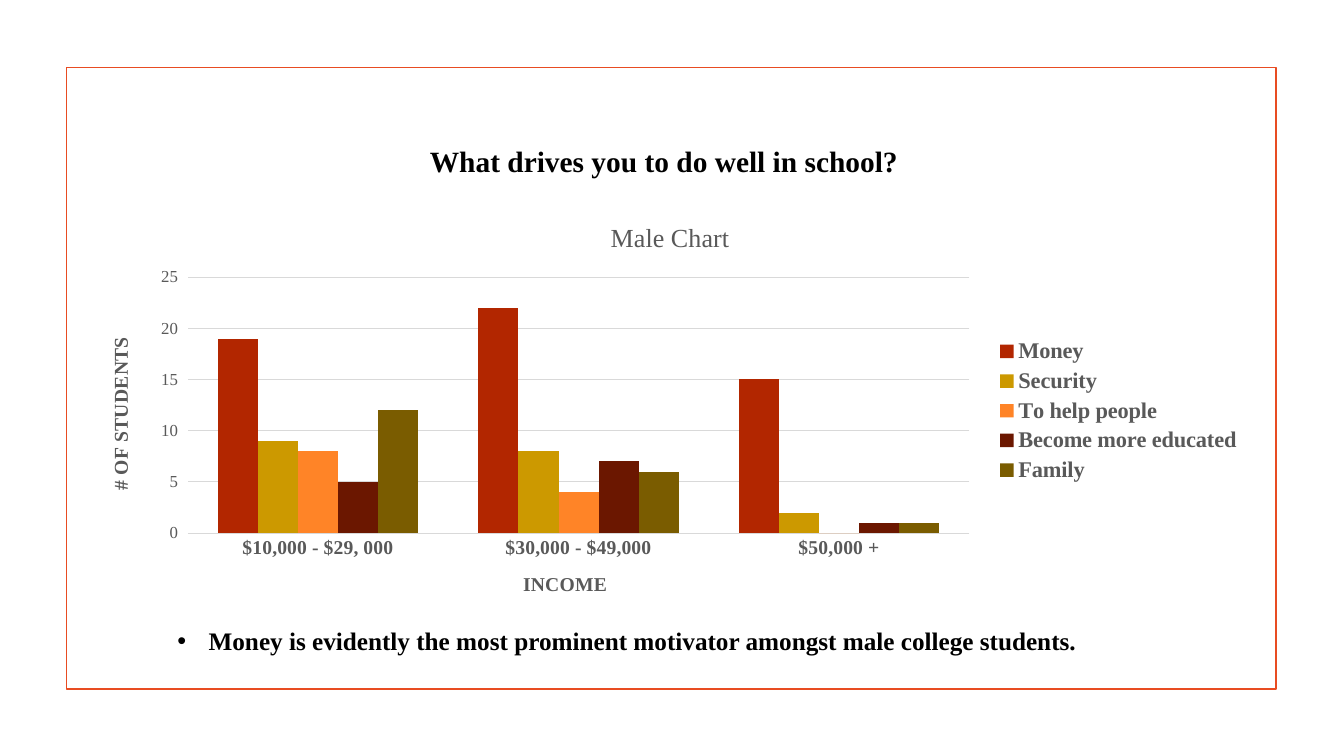
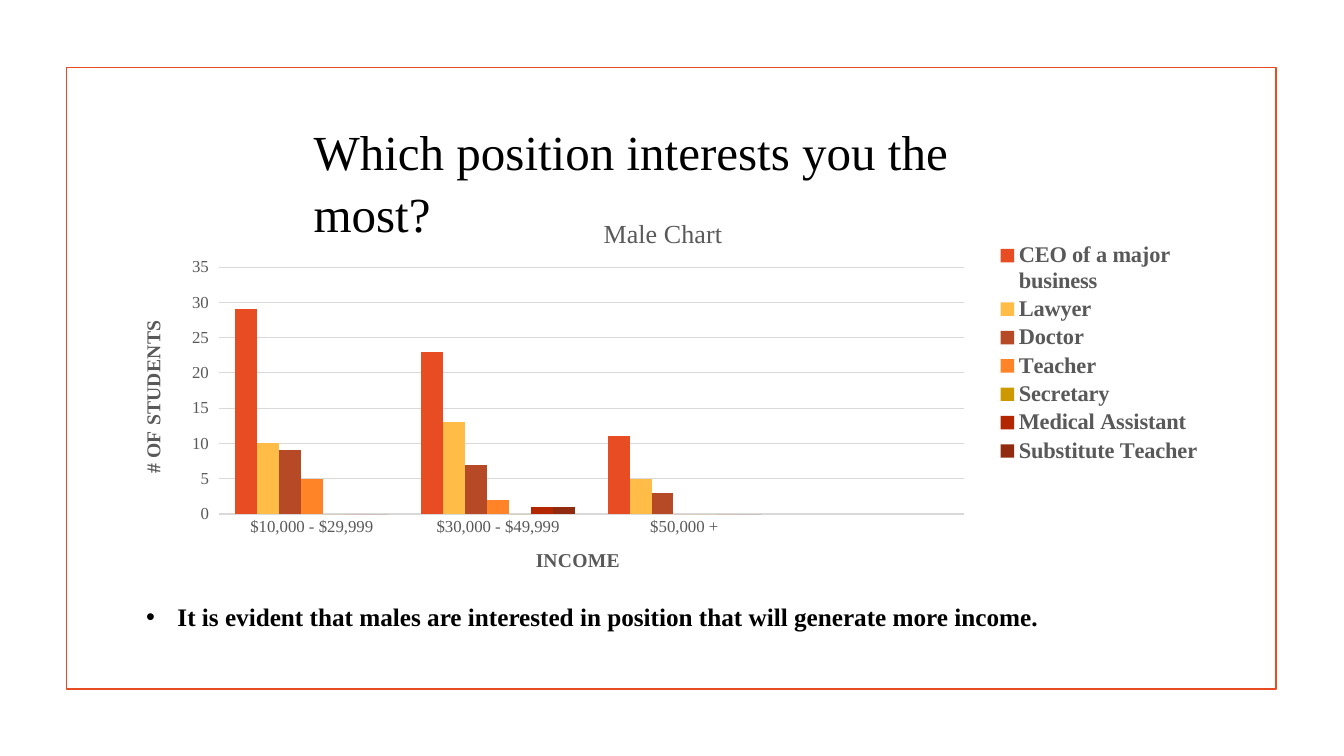
"""Builds two slides that chart what motivates and interests male students."""
from dataclasses import dataclass
from typing import Any, NamedTuple, Optional

from lxml.etree import SubElement
from pptx import Presentation
from pptx.chart.data import CategoryChartData
from pptx.dml.color import RGBColor
from pptx.dml.fill import FillFormat
from pptx.enum.chart import XL_CHART_TYPE, XL_LEGEND_POSITION, XL_TICK_MARK
from pptx.enum.shapes import MSO_SHAPE
from pptx.enum.text import MSO_ANCHOR, MSO_AUTO_SIZE, PP_ALIGN
from pptx.oxml.ns import qn
from pptx.util import Inches, Pt

WIDTH, HEIGHT = Inches(13.33), Inches(7.5)
FONT = "Times New Roman"
BLACK, GRAY, GRID, ORANGE = "000000", "595959", "D9D9D9", "E84C22"

STATEMENT = {"name": FONT, "size": Pt(18), "bold": True, "color": BLACK}
CHART_TITLE = {"name": FONT, "size": Pt(18.6), "bold": False, "color": GRAY}
AXIS_TITLE = {"name": FONT, "size": Pt(14), "bold": True, "color": GRAY}
AXIS_LABEL = {"name": FONT, "size": Pt(12), "bold": False, "color": GRAY}
LEGEND_LABEL = {"name": FONT, "size": Pt(16), "bold": True, "color": GRAY}


class Area(NamedTuple):
    """Left, top, width and height in percent of the surrounding area."""
    left: float
    top: float
    width: float
    height: float

    def lengths(self) -> tuple[int, ...]:
        """Returns the four lengths measured on the slide."""
        sides = (WIDTH, HEIGHT, WIDTH, HEIGHT)
        return tuple(int(share * side / 100) for share, side in zip(self, sides))


class Series(NamedTuple):
    """One answer with its bar colour and its counts per income."""
    name: str
    color: str
    values: tuple[Optional[int], ...]


@dataclass(frozen=True)
class SurveyPage:
    """The question, chart and finding of one slide."""
    question: str
    question_area: Area
    question_format: dict[str, Any]
    question_alignment: PP_ALIGN
    finding: str
    finding_area: Area
    chart_area: Area
    plot_area: Area
    legend_area: Optional[Area]
    incomes: tuple[str, ...]
    income_format: dict[str, Any]
    maximum: int
    series: tuple[Series, ...]


FRAME = Area(4.95, 8.93, 90.02, 82.27)

PAGES = (
    SurveyPage(
        question="What drives you to do well in school?",
        question_area=Area(11.33, 18, 76.14, 6),
        question_format={**STATEMENT, "size": Pt(21)},
        question_alignment=PP_ALIGN.CENTER,
        finding="Money is evidently the most prominent motivator amongst male college students.",
        finding_area=Area(12.45, 81.87, 76.14, 5.33),
        chart_area=Area(6.53, 26.8, 86.65, 55.07),
        plot_area=Area(8.6, 17.9, 67.1, 61.5),
        legend_area=None,
        incomes=("$10,000 - $29, 000", "$30,000 - $49,000", "$50,000 +"),
        income_format=AXIS_TITLE,
        maximum=25,
        series=(
            Series("Money", "B22600", (19, 22, 15)),
            Series("Security", "CC9900", (9, 8, 2)),
            Series("To help people", "FF8427", (8, 4, 0)),
            Series("Become more educated", "6B1700", (5, 7, 1)),
            Series("Family", "7A5C00", (12, 6, 1)),
        ),
    ),
    SurveyPage(
        question="Which position interests you the most?",
        question_area=Area(22.58, 15.07, 57.16, 9.2),
        question_format={**STATEMENT, "size": Pt(35), "bold": False},
        question_alignment=PP_ALIGN.LEFT,
        finding="It is evident that males are interested in position that will generate more income.",
        finding_area=Area(10.13, 78.67, 75.24, 5.33),
        chart_area=Area(8.93, 26.4, 80.8, 52.27),
        plot_area=Area(9.1, 17.1, 68.6, 62.5),
        legend_area=Area(80.5, 10.2, 19.3, 57.5),
        incomes=("$10,000 - $29,999", "$30,000 - $49,999", "$50,000 +", ""),
        income_format=AXIS_LABEL,
        maximum=35,
        series=(
            Series("CEO of a major business", ORANGE, (29, 23, 11, None)),
            Series("Lawyer", "FFBD47", (10, 13, 5, None)),
            Series("Doctor", "B64926", (9, 7, 3, None)),
            Series("Teacher", "FF8427", (5, 2, 0, None)),
            Series("Secretary", "CC9900", (0, 0, 0, None)),
            Series("Medical Assistant", "B22600", (0, 1, 0, None)),
            Series("Substitute Teacher", "912B0F", (0, 1, 0, None)),
        ),
    ),
)


def paint(fill: FillFormat, color: str) -> None:
    """Fills with one solid colour."""
    fill.solid()
    fill.fore_color.rgb = RGBColor.from_string(color)


def format_font(font: Any, values: dict[str, Any]) -> None:
    """Sets the font attributes named in the values."""
    for name, value in values.items():
        if name == "color":
            paint(font.fill, value)
        else:
            setattr(font, name, value)


def place_layout(element: Any, index: int, area: Area, inner: bool = False) -> None:
    """Fixes the place of a chart part as shares of the chart."""
    for previous in element.findall(qn("c:layout")):
        element.remove(previous)
    layout = element.makeelement(qn("c:layout"))
    element.insert(index, layout)
    manual = SubElement(layout, qn("c:manualLayout"))
    settings = {"layoutTarget": "inner"} if inner else {}
    settings.update(xMode="edge", yMode="edge")
    settings.update(zip("xywh", (f"{share / 100:.3f}" for share in area)))
    for name, value in settings.items():
        SubElement(manual, qn(f"c:{name}")).set("val", value)


def write_title(owner: Any, text: str, values: dict[str, Any]) -> Any:
    """Writes a chart or axis title and returns its text frame."""
    frame = owner.text_frame
    frame.text = text
    format_font(frame.paragraphs[0].runs[0].font, values)
    return frame


def fill_placeholder(box: Any, area: Area, text: str, values: dict[str, Any],
                     alignment: PP_ALIGN) -> Any:
    """Moves a placeholder, writes its text and returns the paragraph."""
    box.left, box.top, box.width, box.height = area.lengths()
    frame = box.text_frame
    frame.word_wrap = True
    frame.auto_size = MSO_AUTO_SIZE.NONE
    frame.vertical_anchor = MSO_ANCHOR.TOP
    para = frame.paragraphs[0]
    para.alignment = alignment
    para.space_before = Pt(0)
    para.line_spacing = 1.05
    span = para.add_run()
    span.text = text
    format_font(span.font, values)
    return para


def add_bullet(para: Any) -> None:
    """Gives a paragraph a round bullet with a hanging indent."""
    properties = para._p.get_or_add_pPr()
    indent = Inches(0.31)
    properties.set("marL", str(indent))
    properties.set("indent", str(-indent))
    SubElement(properties, qn("a:buFont")).set("typeface", "Arial")
    SubElement(properties, qn("a:buChar")).set("char", "•")


def add_frame(slide: Any) -> None:
    """Draws the thin outline around the slide content."""
    box = slide.shapes.add_shape(MSO_SHAPE.RECTANGLE, *FRAME.lengths())
    box.shadow.inherit = False
    box.fill.background()
    paint(box.line.fill, ORANGE)
    box.line.width = Pt(1.25)


def format_axes(chart: Any, page: SurveyPage) -> None:
    """Formats the income axis and the student axis."""
    incomes, students = chart.category_axis, chart.value_axis
    incomes.major_tick_mark = XL_TICK_MARK.NONE
    incomes.has_major_gridlines = False
    format_font(incomes.tick_labels.font, page.income_format)
    write_title(incomes.axis_title, "INCOME", AXIS_TITLE)

    limits = {"minimum_scale": 0, "maximum_scale": page.maximum, "major_unit": 5,
              "has_major_gridlines": True, "major_tick_mark": XL_TICK_MARK.OUTSIDE}
    for name, value in limits.items():
        setattr(students, name, value)
    format_font(students.tick_labels.font, AXIS_LABEL)
    frame = write_title(students.axis_title, "# OF STUDENTS", AXIS_TITLE)
    frame._txBody.find(qn("a:bodyPr")).set("rot", "-5400000")
    students.format.line.fill.background()
    for line in (incomes.format.line, students.major_gridlines.format.line):
        paint(line.fill, GRID)
        line.width = Pt(0.75)


def add_survey_chart(slide: Any, page: SurveyPage) -> None:
    """Draws the clustered columns of one survey question."""
    data = CategoryChartData()
    data.categories = page.incomes
    for series in page.series:
        data.add_series(series.name, series.values)
    chart = slide.shapes.add_chart(
        XL_CHART_TYPE.COLUMN_CLUSTERED, *page.chart_area.lengths(), data).chart
    format_font(chart.font, {"name": FONT, "size": Pt(10), "color": BLACK})
    chart.has_title = True
    write_title(chart.chart_title, "Male Chart", CHART_TITLE)

    plot = chart.plots[0]
    plot.vary_by_categories = False
    plot.gap_width = 150
    plot.overlap = 0
    for bars, series in zip(plot.series, page.series):
        paint(bars.format.fill, series.color)
    format_axes(chart, page)
    place_layout(chart._chartSpace.chart.plotArea, 0, page.plot_area, inner=True)

    chart.has_legend = True
    legend = chart.legend
    legend.position = XL_LEGEND_POSITION.RIGHT
    legend.include_in_layout = False
    format_font(legend.font, LEGEND_LABEL)
    if page.legend_area:
        place_layout(legend._element, 1, page.legend_area)


def add_page(deck: Any, page: SurveyPage) -> None:
    """Adds one survey slide to the deck."""
    slide = deck.slides.add_slide(deck.slide_layouts.get_by_name("Title and Content"))
    add_frame(slide)
    add_survey_chart(slide, page)
    fill_placeholder(slide.shapes.title, page.question_area, page.question,
                     page.question_format, page.question_alignment)
    add_bullet(fill_placeholder(slide.placeholders[1], page.finding_area, page.finding,
                                STATEMENT, PP_ALIGN.LEFT))


def main() -> None:
    """Builds and saves the deck."""
    deck = Presentation()
    deck.slide_width, deck.slide_height = WIDTH, HEIGHT
    for page in PAGES:
        add_page(deck, page)
    deck.save("out.pptx")


if __name__ == "__main__":
    main()
